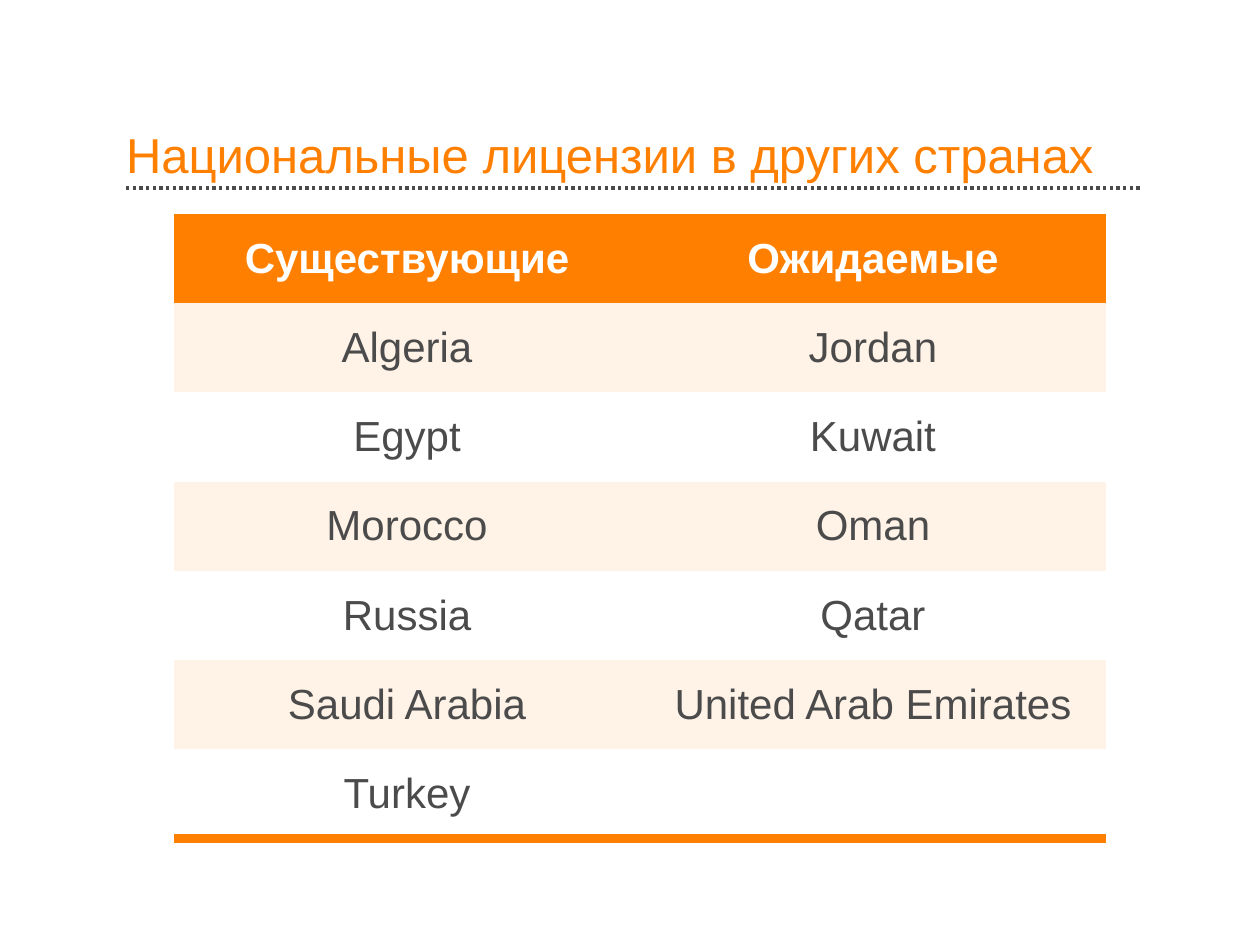
import pptx
import pptx.util
import pptx.dml.color
import pptx.enum.dml
import pptx.enum.shapes
import pptx.enum.text
import pptx.oxml
import pptx.oxml.ns

# Content
TITLE = "Национальные лицензии в других странах"
ROWS = [
    ("Существующие", "Ожидаемые"),
    ("Algeria", "Jordan"),
    ("Egypt", "Kuwait"),
    ("Morocco", "Oman"),
    ("Russia", "Qatar"),
    ("Saudi Arabia", "United Arab Emirates"),
    ("Turkey", ""),
]
HUES = {"accent": "FF8000", "text": "4B4B4B", "band": "FFF2E7", "white": "FFFFFF"}
FONT = "Arial"
PLAIN = "{2D5ABB26-0587-4C30-8999-92F81FD0307C}"  # table style without a grid

# Lengths in px, 126 to the inch
SCALE = 914400 / 126
LEFT, WIDE = 126, 1016
TITLE_TOP, TITLE_TALL, RULE_Y = 69, 115, 188
GRID = (174, 214, 932, 625)
INSET = 9


def px(n):
    return pptx.util.Emu(round(n * SCALE))


def hue(name):
    return pptx.dml.color.RGBColor.from_string(HUES[name])


def add_run(para, text, size, color, bold=False):
    run = para.add_run()
    run.text = text
    font = run.font
    font.name, font.size, font.bold = FONT, pptx.util.Pt(size), bold
    font.color.rgb = hue(color)


def add_edge(cell, color, points):
    """Draw the bottom border of a cell; borders come before its fill."""
    props = cell._tc.get_or_add_tcPr()
    edge = pptx.oxml.parse_xml(
        f'<a:lnB {pptx.oxml.ns.nsdecls("a")} w="{pptx.util.Pt(points)}">'
        f'<a:solidFill><a:srgbClr val="{HUES[color]}"/></a:solidFill></a:lnB>')
    props.insert(0, edge)


deck = pptx.Presentation()
deck.slide_width, deck.slide_height = px(1260), px(945)
slide = deck.slides.add_slide(deck.slide_layouts[5])

# Dotted rule under the title
rule = slide.shapes.add_connector(
    pptx.enum.shapes.MSO_CONNECTOR.STRAIGHT,
    px(LEFT), px(RULE_Y), px(LEFT + WIDE), px(RULE_Y))
rule.line.color.rgb = hue("text")
rule.line.width = pptx.util.Pt(1.9)
rule.line.dash_style = pptx.enum.dml.MSO_LINE.ROUND_DOT
pptx.oxml.ns.qn("a:effectLst")
rule._element.spPr.append(
    pptx.oxml.parse_xml(f'<a:effectLst {pptx.oxml.ns.nsdecls("a")}/>'))

# Title
title = slide.shapes.title
title.left, title.top = px(LEFT), px(TITLE_TOP)
title.width, title.height = px(WIDE), px(TITLE_TALL)
frame = title.text_frame
frame.margin_left = frame.margin_right = frame.margin_top = frame.margin_bottom = 0
frame.vertical_anchor = pptx.enum.text.MSO_ANCHOR.BOTTOM
frame.auto_size = pptx.enum.text.MSO_AUTO_SIZE.NONE
frame.word_wrap = True
para = frame.paragraphs[0]
para.alignment = pptx.enum.text.PP_ALIGN.LEFT
para.line_spacing = 0.9
add_run(para, TITLE, 28, "accent")

# Table of countries
table = slide.shapes.add_table(len(ROWS), len(ROWS[0]), *map(px, GRID)).table
table.first_row = table.horz_banding = False
table._tbl.tblPr.find(pptx.oxml.ns.qn("a:tableStyleId")).text = PLAIN
for col in table.columns:
    col.width = px(GRID[2] / len(ROWS[0]))
for r, names in enumerate(ROWS):
    table.rows[r].height = px(GRID[3] / len(ROWS))
    head = r == 0
    fill = "accent" if head else "band" if r % 2 else "white"
    for c, name in enumerate(names):
        cell = table.cell(r, c)
        cell.margin_left = cell.margin_right = px(INSET)
        cell.margin_top = cell.margin_bottom = 0
        cell.vertical_anchor = pptx.enum.text.MSO_ANCHOR.MIDDLE
        cell.fill.solid()
        cell.fill.fore_color.rgb = hue(fill)
        para = cell.text_frame.paragraphs[0]
        para.alignment = pptx.enum.text.PP_ALIGN.CENTER
        if name:
            add_run(para, name, 24, "white" if head else "text", head)
        if r == len(ROWS) - 1:
            add_edge(cell, "accent", 6)

deck.save("out.pptx")
